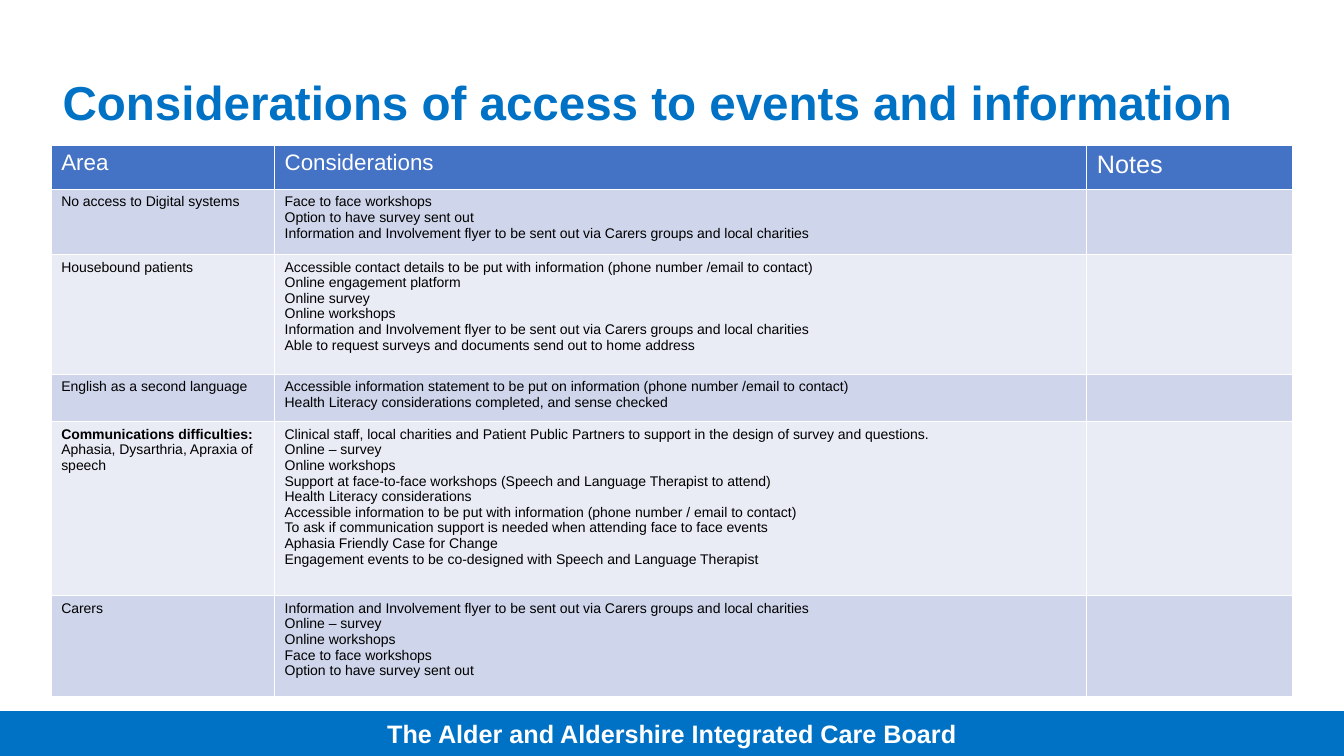
import lxml.etree
import pptx
import pptx.dml.color
import pptx.enum.shapes
import pptx.enum.text
import pptx.oxml.ns
import pptx.util

Cm = pptx.util.Cm
Pt = pptx.util.Pt

TITLE = "Considerations of access to events and information"
BOARD = "The Alder and Aldershire Integrated Care Board"
FLYER = ("Information and Involvement flyer to be sent out via Carers groups "
         "and local charities")

HEADINGS = [("Area", 16), ("Considerations", 16), ("Notes", 18)]
# Each area: bold lead-in, name, considerations
AREAS = [
    ("", "No access to Digital systems", [
        "Face to face workshops",
        "Option to have survey sent out",
        FLYER,
    ]),
    ("", "Housebound patients", [
        "Accessible contact details to be put with information (phone number /email to contact)",
        "Online engagement platform",
        "Online survey",
        "Online workshops",
        FLYER,
        "Able to request surveys and documents send out to home address",
    ]),
    ("", "English as a second language", [
        "Accessible information statement to be put on information (phone number /email to contact)",
        "Health Literacy considerations completed, and sense checked",
    ]),
    ("Communications difficulties: ", "Aphasia, Dysarthria, Apraxia of speech", [
        "Clinical staff, local charities and Patient Public Partners to support "
        "in the design of survey and questions.",
        "Online – survey",
        "Online workshops",
        "Support at face-to-face workshops (Speech and Language Therapist to attend)",
        "Health Literacy considerations",
        "Accessible information to be put with information (phone number / email to contact)",
        "To ask if communication support is needed when attending face to face events",
        "Aphasia Friendly Case for Change",
        "Engagement events to be co-designed with Speech and Language Therapist",
    ]),
    ("", "Carers", [
        FLYER,
        "Online – survey",
        "Online workshops",
        "Face to face workshops",
        "Option to have survey sent out",
    ]),
]

COLUMN_WIDTHS = [5.63, 20.47, 5.19]
ROW_HEIGHTS = [1.1, 1.64, 3.02, 1.19, 4.39, 2.55]
SLIDE_WIDTH, SLIDE_HEIGHT, FOOTER_HEIGHT = 33.87, 19.05, 1.12
FONT = "Arial"
COLOURS = {
    "brand": "0072C6", "header": "4472C4", "odd": "CFD5EA", "even": "E9EBF5",
    "white": "FFFFFF", "black": "000000",
}


def colour(name):
    return pptx.dml.color.RGBColor.from_string(COLOURS[name])


def add_run(paragraph, text, size, ink, bold=False):
    run = paragraph.add_run()
    run.text = text
    run.font.name = FONT
    run.font.size = Pt(size)
    run.font.bold = bold
    run.font.color.rgb = colour(ink)


def style_cell(cell, fill):
    """Give the cell thin white borders and a solid fill."""
    properties = cell._tc.get_or_add_tcPr()
    for side in ("a:lnL", "a:lnR", "a:lnT", "a:lnB"):
        border = lxml.etree.SubElement(
            properties, pptx.oxml.ns.qn(side), w=str(Pt(1)))
        solid = lxml.etree.SubElement(border, pptx.oxml.ns.qn("a:solidFill"))
        lxml.etree.SubElement(
            solid, pptx.oxml.ns.qn("a:srgbClr"), val=COLOURS["white"])
    cell.fill.solid()
    cell.fill.fore_color.rgb = colour(fill)


def add_title(slide):
    title = slide.shapes.add_textbox(Cm(1.33), Cm(0.81), Cm(31.17), Cm(3.68))
    frame = title.text_frame
    frame.word_wrap = True
    frame.vertical_anchor = pptx.enum.text.MSO_ANCHOR.MIDDLE
    frame.paragraphs[0].line_spacing = 0.9
    add_run(frame.paragraphs[0], TITLE, 34, "brand", bold=True)


def add_footer(slide):
    footer = slide.shapes.add_shape(
        pptx.enum.shapes.MSO_SHAPE.RECTANGLE,
        0, Cm(SLIDE_HEIGHT - FOOTER_HEIGHT), Cm(SLIDE_WIDTH), Cm(FOOTER_HEIGHT))
    footer.shadow.inherit = False
    footer.fill.solid()
    footer.fill.fore_color.rgb = colour("brand")
    footer.line.color.rgb = colour("brand")
    footer.line.width = Pt(1)
    footer.text_frame.vertical_anchor = pptx.enum.text.MSO_ANCHOR.MIDDLE
    paragraph = footer.text_frame.paragraphs[0]
    paragraph.alignment = pptx.enum.text.PP_ALIGN.CENTER
    add_run(paragraph, BOARD, 18, "white", bold=True)


def add_considerations(slide):
    table = slide.shapes.add_table(
        len(ROW_HEIGHTS), len(COLUMN_WIDTHS), Cm(1.29), Cm(3.67),
        Cm(sum(COLUMN_WIDTHS)), Cm(sum(ROW_HEIGHTS))).table
    for column, width in zip(table.columns, COLUMN_WIDTHS):
        column.width = Cm(width)
    for index, (row, height) in enumerate(zip(table.rows, ROW_HEIGHTS)):
        row.height = Cm(height)
        band = "header" if index == 0 else "odd" if index % 2 else "even"
        for cell in row.cells:
            style_cell(cell, band)

    for index, (heading, size) in enumerate(HEADINGS):
        paragraph = table.cell(0, index).text_frame.paragraphs[0]
        add_run(paragraph, heading, size, "white")

    for index, (lead, area, considerations) in enumerate(AREAS, start=1):
        paragraph = table.cell(index, 0).text_frame.paragraphs[0]
        if lead:
            add_run(paragraph, lead, 10, "black", bold=True)
        add_run(paragraph, area, 10, "black")
        frame = table.cell(index, 1).text_frame
        for line, consideration in enumerate(considerations):
            paragraph = frame.add_paragraph() if line else frame.paragraphs[0]
            add_run(paragraph, consideration, 10, "black")


def main():
    deck = pptx.Presentation()
    deck.slide_width = Cm(SLIDE_WIDTH)
    deck.slide_height = Cm(SLIDE_HEIGHT)
    slide = deck.slides.add_slide(deck.slide_layouts[6])
    add_title(slide)
    add_footer(slide)
    add_considerations(slide)
    deck.save("out.pptx")


if __name__ == "__main__":
    main()
